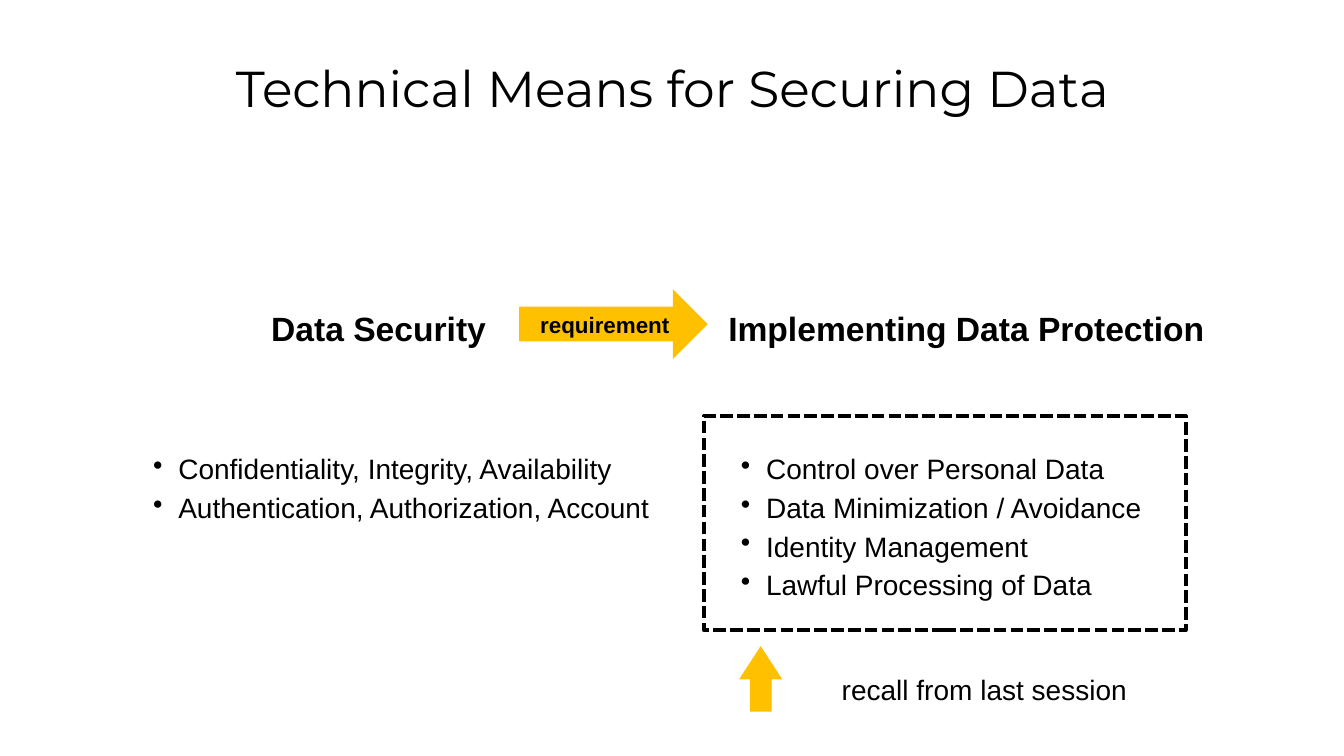
from lxml import etree
from pptx import Presentation
from pptx.dml.color import RGBColor
from pptx.enum import dml, shapes, text
from pptx.oxml import ns
from pptx.util import Inches, Pt

BLACK = RGBColor(0x00, 0x00, 0x00)
AMBER = RGBColor(0xFF, 0xC0, 0x00)
COLUMN_WIDTH = 5.67
LIST_INDENT = 0.5

# Column left edge, heading, points
COLUMNS = [
    (0.92, "Data Security", [
        "Confidentiality, Integrity, Availability",
        "Authentication, Authorization, Account",
    ]),
    (6.75, "Implementing Data Protection", [
        "Control over Personal Data",
        "Data Minimization / Avoidance",
        "Identity Management",
        "Lawful Processing of Data",
    ]),
]


def set_font(paragraph, size, name="Arial", bold=False):
    font = paragraph.font
    font.name, font.size, font.bold = name, Pt(size), bold
    font.color.rgb = BLACK


def add_bullet(paragraph):
    properties = paragraph._p.get_or_add_pPr()
    properties.set("marL", str(Inches(0.25)))
    properties.set("indent", str(-Inches(0.25)))
    bullet = etree.SubElement(properties, ns.qn("a:buChar"))
    bullet.set("char", "•")


def add_text(slide, place, lines, size, name="Arial", bold=False,
             centred=False, bulleted=False, anchor=text.MSO_ANCHOR.TOP):
    frame = slide.shapes.add_textbox(*map(Inches, place)).text_frame
    frame.word_wrap = True
    frame.vertical_anchor = anchor
    for index, line in enumerate(lines):
        paragraph = frame.add_paragraph() if index else frame.paragraphs[0]
        paragraph.text = line
        if bulleted:
            add_bullet(paragraph)
        if centred:
            paragraph.alignment = text.PP_ALIGN.CENTER
        paragraph.line_spacing = 0.9
        if index:
            paragraph.space_before = Pt(6)
        set_font(paragraph, size, name, bold)


def add_arrow(slide, kind, place):
    arrow = slide.shapes.add_shape(kind, *map(Inches, place))
    arrow.shadow.inherit = False
    arrow.fill.solid()
    arrow.fill.fore_color.rgb = AMBER
    arrow.line.fill.background()
    return arrow


def add_dashed_frame(slide, place):
    frame = slide.shapes.add_shape(shapes.MSO_SHAPE.RECTANGLE, *map(Inches, place))
    frame.shadow.inherit = False
    frame.fill.background()
    frame.line.color.rgb = BLACK
    frame.line.width = Pt(3)
    frame.line.dash_style = dml.MSO_LINE.SQUARE_DOT


def main():
    deck = Presentation()
    deck.slide_width, deck.slide_height = Inches(13.33), Inches(7.5)
    slide = deck.slides.add_slide(deck.slide_layouts[6])

    # Title
    add_text(slide, (0.92, 0.18, 11.5, 1.45), ["Technical Means for Securing Data"],
             36, name="Montserrat", centred=True, anchor=text.MSO_ANCHOR.MIDDLE)

    # Two columns: heading above a list
    for left, heading, points in COLUMNS:
        add_text(slide, (left, 3.05, COLUMN_WIDTH, 0.5), [heading], 24,
                 bold=True, centred=True)
        add_text(slide, (left + LIST_INDENT, 4.47, COLUMN_WIDTH - LIST_INDENT, 1.6),
                 points, 20, bulleted=True)

    # Arrow from security to data protection
    requirement = add_arrow(slide, shapes.MSO_SHAPE.RIGHT_ARROW, (5.15, 2.87, 1.87, 0.69))
    requirement.text_frame.vertical_anchor = text.MSO_ANCHOR.MIDDLE
    label = requirement.text_frame.paragraphs[0]
    label.text = "requirement"
    label.alignment = text.PP_ALIGN.CENTER
    set_font(label, 16, bold=True)

    # Topics recalled from the last session
    add_dashed_frame(slide, (6.98, 4.13, 4.78, 2.12))
    recall = add_arrow(slide, shapes.MSO_SHAPE.UP_ARROW, (7.33, 6.41, 0.43, 0.65))
    recall.adjustments[1] = 0.77
    add_text(slide, (8.25, 6.66, 4.17, 0.4), ["recall from last session"], 20)

    deck.save("out.pptx")


if __name__ == "__main__":
    main()
